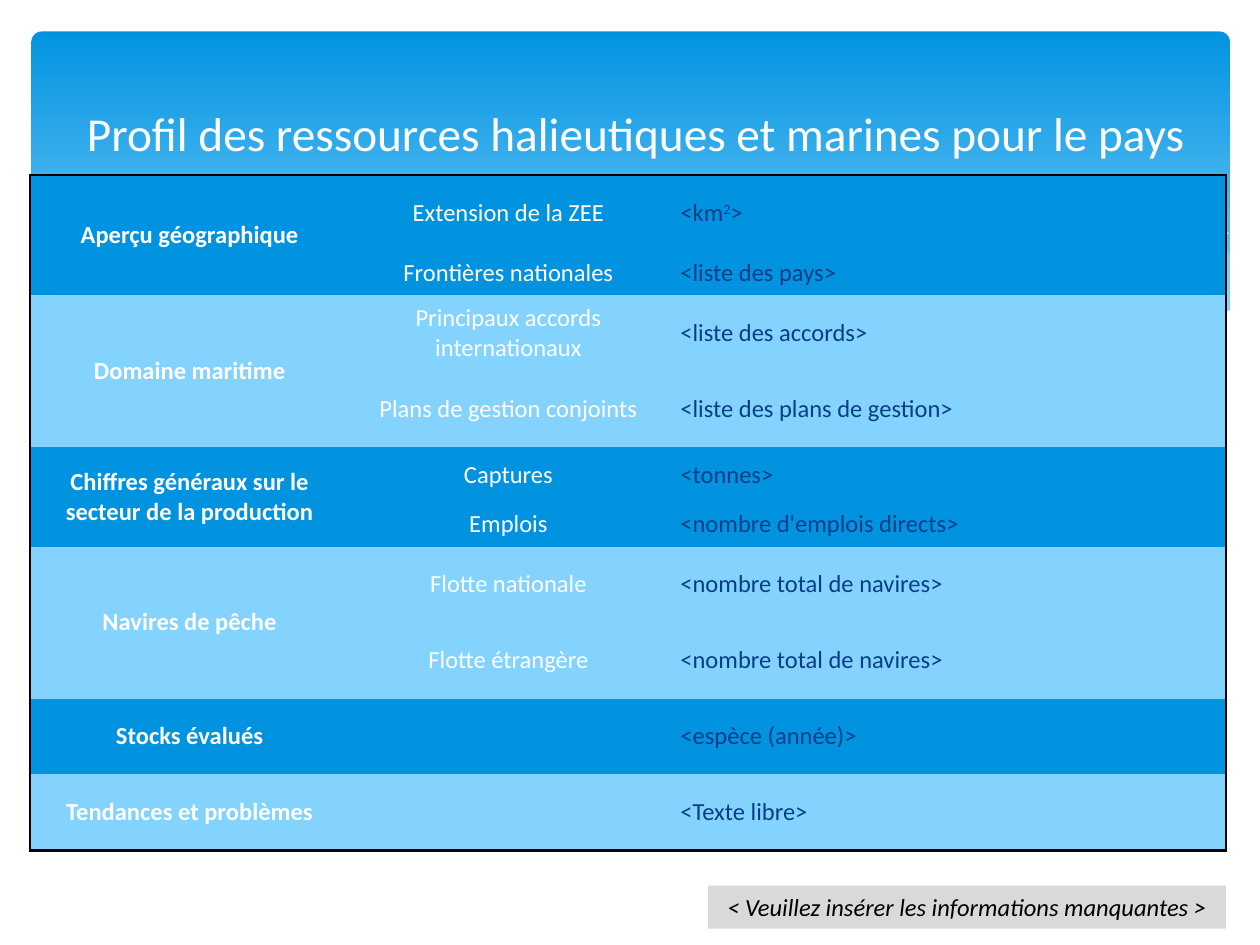
from dataclasses import dataclass

from lxml import etree
from pptx import Presentation
from pptx import util as u
from pptx.dml.color import RGBColor
from pptx.enum import shapes, text
from pptx.oxml.ns import qn


@dataclass(frozen=True)
class Theme:
    font: str = "Calibri"
    title_size: int = 27
    body_size: int = 14
    blue: str = "0293E0"
    sky: str = "83D3FE"
    mist: str = "C6E7FC"
    navy: str = "073E87"
    grey: str = "D9D9D9"
    white: str = "FFFFFF"
    black: str = "000000"


@dataclass(frozen=True)
class Box:
    left: float
    top: float
    width: float
    height: float

    def emu(self):
        return [u.Inches(n) for n in (self.left, self.top, self.width, self.height)]


THEME = Theme()

# Wave outlines, in inches from the corner of the wave band
RIGHT_WAVE = [(9.53, 0.16), (9.12, 0.23), (8.38, 0.39), (7.3, 0.64), (6.38, 0.81),
              (6.96, 0.88), (7.58, 0.93), (8.01, 0.93), (8.49, 0.9), (8.98, 0.81),
              (9.53, 0.63)]
LONG_WAVE = [(8.7, 0.89), (7.84, 0.76), (6.83, 0.56), (6.06, 0.38), (5.18, 0.19),
             (4.42, 0.07), (3.57, 0.01), (2.63, 0.07), (3.39, 0.19), (4.26, 0.38),
             (5.43, 0.64), (6.42, 0.82), (7.25, 0.92), (7.95, 0.94)]
FALLING_LINE = [(2.86, 0.11), (3.4, 0.05), (4.1, 0.03), (4.87, 0.08), (5.85, 0.2),
                (6.72, 0.35), (7.72, 0.57), (8.84, 0.88)]
RISING_LINE = [(5.9, 0.73), (6.72, 0.51), (7.83, 0.26), (8.72, 0.1), (9.52, 0.01)]
WHITE_WAVE = [(9.54, 0.62), (8.97, 0.81), (8.4, 0.9), (7.86, 0.93), (7.21, 0.9),
              (6.45, 0.81), (5.56, 0.66), (4.24, 0.36), (3.17, 0.13), (2.27, 0.02),
              (1.54, 0), (0.83, 0.05), (0.29, 0.17), (0, 0.29), (0, 1.45), (9.54, 1.45)]

# Each theme of the profile with its (label, value) rows
PROFILE = [
    ("Aperçu géographique", [("Extension de la ZEE", "<km^2^>"),
                             ("Frontières nationales", "<liste des pays>")]),
    ("Domaine maritime", [("Principaux accords internationaux", "<liste des accords>"),
                          ("Plans de gestion conjoints", "<liste des plans de gestion>")]),
    ("Chiffres généraux sur le secteur de la production",
     [("Captures", "<tonnes>"), ("Emplois", "<nombre d'emplois directs>")]),
    ("Navires de pêche", [("Flotte nationale", "<nombre total de navires>"),
                          ("Flotte étrangère", "<nombre total de navires>")]),
    ("Stocks évalués", [("", "<espèce (année)>")]),
    ("Tendances et problèmes", [("", "<Texte libre>")]),
]
LOW_ROWS = {1: 0.35, 4: 0.44, 5: 0.35}


def put_text(frame, words, size=THEME.body_size, color=THEME.white, bold=False,
             italic=False, align=text.PP_ALIGN.CENTER):
    """Write one paragraph; words between carets are raised."""
    para = frame.paragraphs[0]
    para.alignment = align
    for index, part in enumerate(words.split("^")):
        span = para.add_run()
        span.text = part
        font = span.font
        font.name, font.size = THEME.font, u.Pt(size)
        font.bold, font.italic = bold, italic
        font.color.rgb = RGBColor.from_string(color)
        if index % 2:
            font._element.set("baseline", "30000")


def paint(fill, color, opacity=100):
    fill.solid()
    fill.fore_color.rgb = RGBColor.from_string(color)
    if opacity < 100:
        tint = fill._xPr.find(qn("a:solidFill"))[0]
        etree.SubElement(tint, qn("a:alpha")).set("val", str(opacity * 1000))


def add_panel(page, box):
    panel = page.shapes.add_shape(shapes.MSO_SHAPE.ROUNDED_RECTANGLE, *box.emu())
    panel.shadow.inherit = False
    panel.adjustments[0] = 0.03
    panel.line.fill.background()
    panel.fill.gradient()
    panel.fill.gradient_angle = 270
    stops = zip(panel.fill.gradient_stops, (THEME.blue, THEME.sky), (0, 0.9))
    for stop, color, position in stops:
        stop.color.rgb = RGBColor.from_string(color)
        stop.position = position


def add_wave(page, box, points, fill=None, opacity=100):
    """Draw a filled wave, or an open white line when there is no fill."""
    places = [(u.Inches(box.left + x), u.Inches(box.top + y)) for x, y in points]
    builder = page.shapes.build_freeform(*places[0], scale=1.0)
    builder.add_line_segments(places[1:], close=fill is not None)
    wave = builder.convert_to_shape()
    wave.shadow.inherit = False
    if fill:
        paint(wave.fill, fill, opacity)
        wave.line.fill.background()
    else:
        wave.fill.background()
        wave.line.color.rgb = RGBColor.from_string(THEME.white)
        wave.line.width = u.Pt(0)


def add_waves(page, box):
    add_wave(page, box, RIGHT_WAVE, THEME.mist, 29)
    add_wave(page, box, LONG_WAVE, THEME.mist, 40)
    add_wave(page, box, FALLING_LINE)
    add_wave(page, box, RISING_LINE)
    add_wave(page, box, WHITE_WAVE, THEME.white)


def place_title(page, box, words):
    title = page.shapes.title
    title.left, title.top, title.width, title.height = box.emu()
    page.shapes._spTree.append(title._element)  # in front of the waves
    frame = title.text_frame
    frame.word_wrap = True
    frame.auto_size = text.MSO_AUTO_SIZE.NONE
    frame.vertical_anchor = text.MSO_ANCHOR.MIDDLE
    put_text(frame, words, size=THEME.title_size)


def add_borders(cell, sides):
    props = cell._tc.get_or_add_tcPr()
    for index, side in enumerate(sides):
        line = etree.Element(qn(f"a:ln{side}"), w=str(u.Pt(1.5)))
        solid = etree.SubElement(line, qn("a:solidFill"))
        etree.SubElement(solid, qn("a:srgbClr")).set("val", THEME.black)
        props.insert(index, line)


def add_profile_table(page, box):
    count = sum(len(rows) for _, rows in PROFILE)
    table = page.shapes.add_table(count, 3, *box.emu()).table
    table.first_row = table.horz_banding = False
    style = table._tbl.tblPr.find(qn("a:tableStyleId"))
    style.text = "{2D5ABB26-0587-4C30-8999-92F81FD0307C}"  # no style, no grid

    # The last column and the tall rows share what is left
    for column, width in zip(table.columns, (2.53, 2.53, box.width - 2 * 2.53)):
        column.width = u.Inches(width)
    tall = (box.height - sum(LOW_ROWS.values())) / (count - len(LOW_ROWS))
    for index, row in enumerate(table.rows):
        row.height = u.Inches(LOW_ROWS.get(index, tall))

    first = 0
    for group, (heading, rows) in enumerate(PROFILE):
        for offset, (label, value) in enumerate(rows):
            index = first + offset
            for column, words in enumerate(("" if offset else heading, label, value)):
                cell = table.cell(index, column)
                cell.vertical_anchor = text.MSO_ANCHOR.MIDDLE
                paint(cell.fill, THEME.sky if group % 2 else THEME.blue)
                is_value = column == 2
                put_text(cell.text_frame, words, bold=column == 0,
                         color=THEME.navy if is_value else THEME.white,
                         align=text.PP_ALIGN.LEFT if is_value else text.PP_ALIGN.CENTER)
                edges = {"L": column == 0, "R": is_value,
                         "T": index == 0, "B": index == count - 1}
                add_borders(cell, [side for side, outer in edges.items() if outer])
        if len(rows) > 1:
            table.cell(first, 0).merge(table.cell(first + len(rows) - 1, 0))
        first += len(rows)


def add_reminder(page, box, words):
    reminder = page.shapes.add_shape(shapes.MSO_SHAPE.RECTANGLE, *box.emu())
    reminder.shadow.inherit = False
    paint(reminder.fill, THEME.grey)
    reminder.line.fill.background()
    reminder.text_frame.word_wrap = False
    reminder.text_frame.vertical_anchor = text.MSO_ANCHOR.MIDDLE
    put_text(reminder.text_frame, words, color=THEME.black, italic=True)


def main():
    deck = Presentation()
    deck.slide_width, deck.slide_height = u.Inches(10), u.Inches(7.5)
    page = deck.slides.add_slide(deck.slide_layouts[5])
    add_panel(page, Box(0.25, 0.25, 9.51, 2.7))
    add_waves(page, Box(0.23, 1.84, 9.54, 1.45))
    place_title(page, Box(0.28, 0.37, 9.53, 1.37),
                "Profil des ressources halieutiques et marines pour le pays")
    add_profile_table(page, Box(0.24, 1.39, 9.49, 5.36))
    add_reminder(page, Box(5.62, 7.03, 4.11, 0.34),
                 "< Veuillez insérer les informations manquantes >")
    deck.save("out.pptx")


if __name__ == "__main__":
    main()
